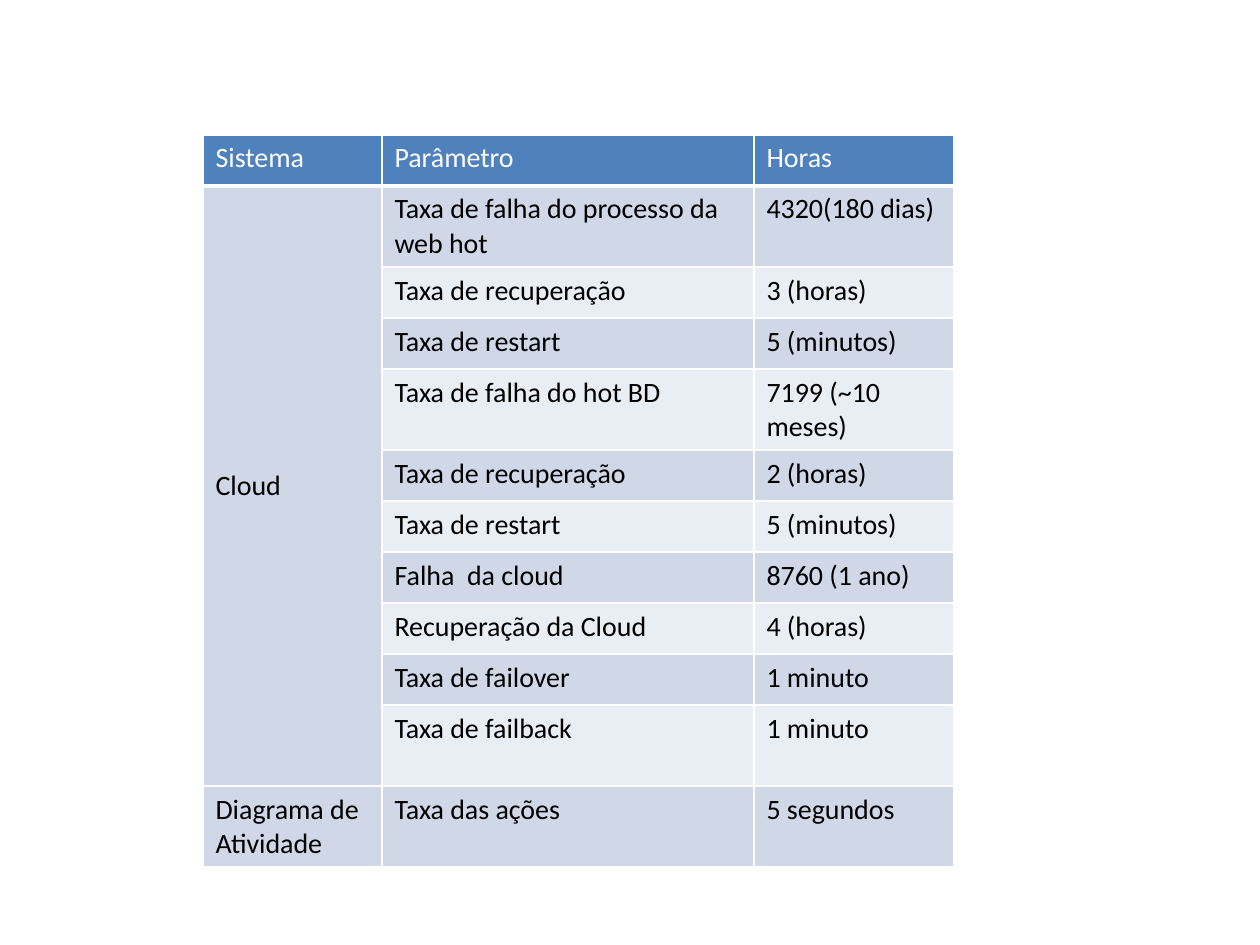
import pptx
import pptx.util
import pptx.dml.color
import pptx.enum.text
import pptx.oxml
import pptx.oxml.ns
from lxml import etree

RGBColor = pptx.dml.color.RGBColor
WHITE = RGBColor(0xFF, 0xFF, 0xFF)
BLACK = RGBColor(0, 0, 0)
HEADER_BLUE = RGBColor(0x4F, 0x81, 0xBD)
BAND_DARK = RGBColor(0xD0, 0xD8, 0xE8)
BAND_LIGHT = RGBColor(0xE9, 0xED, 0xF4)

BLANK_LAYOUT = 6
LINE_HEIGHT = 51
TALL_HEIGHT = 81
TALL_ROWS = (1, 4, 10, 11)
CLOUD_FIRST, CLOUD_LAST = 1, 10
COLUMN_WIDTHS = (179, 372, 200)
ROWS = (
    ("Sistema", "Parâmetro", "Horas"),
    ("Cloud", "Taxa de falha do processo da web hot", "4320(180 dias)"),
    ("", "Taxa de recuperação", "3 (horas)"),
    ("", "Taxa de restart", "5 (minutos)"),
    ("", "Taxa de falha do hot BD", "7199 (~10 meses)"),
    ("", "Taxa de recuperação", "2 (horas)"),
    ("", "Taxa de restart", "5 (minutos)"),
    ("", "Falha  da cloud", "8760 (1 ano)"),
    ("", "Recuperação da Cloud", "4 (horas)"),
    ("", "Taxa de failover", "1 minuto"),
    ("", "Taxa de failback", "1 minuto"),
    ("Diagrama de Atividade", "Taxa das ações", "5 segundos"),
)


def emu(px):
    return pptx.util.Emu(round(px * 914400 / 126))


class SlideWriter:
    font = "Calibri"
    size = pptx.util.Pt(16)

    def __init__(self, page):
        self.page = page

    def border(self, cell, bottom_points):
        properties = cell._tc.get_or_add_tcPr()
        for side, points in (("L", 1), ("R", 1), ("T", 1), ("B", bottom_points)):
            line = etree.SubElement(properties, pptx.oxml.ns.qn(f"a:ln{side}"))
            line.set("w", str(pptx.util.Pt(points)))
            fill = etree.SubElement(line, pptx.oxml.ns.qn("a:solidFill"))
            color = etree.SubElement(fill, pptx.oxml.ns.qn("a:srgbClr"))
            color.set("val", str(WHITE))

    def cell(self, cell, text, fill, color, bottom_points=1):
        self.border(cell, bottom_points)
        cell.fill.solid()
        cell.fill.fore_color.rgb = fill
        cell.text_frame.text = text
        for para in cell.text_frame.paragraphs:
            for span in para.runs:
                span.font.name = self.font
                span.font.size = self.size
                span.font.bold = False
                span.font.color.rgb = color

    def table(self, left, top, widths, heights, rows):
        frame = self.page.shapes.add_table(
            len(rows), len(widths), emu(left), emu(top),
            emu(sum(widths)), emu(sum(heights)))
        table = frame.table
        for column, width in zip(table.columns, widths):
            column.width = emu(width)
        for index, (row, height, texts) in enumerate(zip(table.rows, heights, rows)):
            row.height = emu(height)
            band = BAND_DARK if index % 2 else BAND_LIGHT
            for cell, text in zip(row.cells, texts):
                if index == 0:
                    self.cell(cell, text, HEADER_BLUE, WHITE, bottom_points=3)
                else:
                    self.cell(cell, text, band, BLACK)
        return table


def main():
    deck = pptx.Presentation()
    deck.slide_width, deck.slide_height = emu(1260), emu(945)
    page = deck.slides.add_slide(deck.slide_layouts[BLANK_LAYOUT])
    writer = SlideWriter(page)
    heights = [TALL_HEIGHT if index in TALL_ROWS else LINE_HEIGHT
               for index in range(len(ROWS))]
    table = writer.table(203, 135, COLUMN_WIDTHS, heights, ROWS)
    cloud = table.cell(CLOUD_FIRST, 0)
    cloud.merge(table.cell(CLOUD_LAST, 0))
    cloud.vertical_anchor = pptx.enum.text.MSO_ANCHOR.MIDDLE
    deck.save("out.pptx")


if __name__ == "__main__":
    main()
